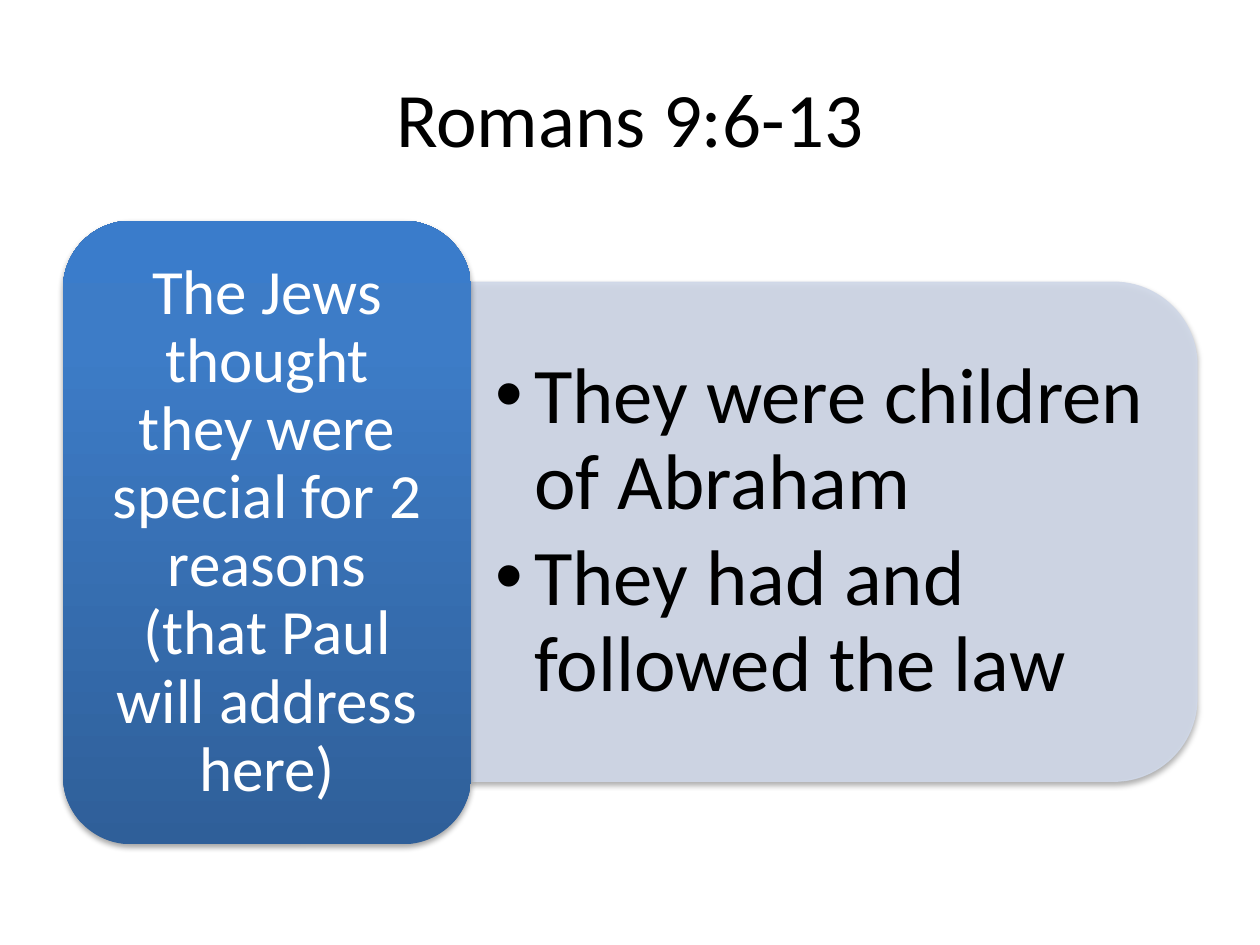
from copy import deepcopy

from lxml import etree
from pptx import Presentation
from pptx.dml.color import RGBColor
from pptx.enum.shapes import MSO_SHAPE
from pptx.enum.text import MSO_ANCHOR, PP_ALIGN
from pptx.oxml.ns import qn
from pptx.util import Cm, Pt

BLACK = RGBColor(0x00, 0x00, 0x00)
WHITE = RGBColor(0xFF, 0xFF, 0xFF)
PALE_BLUE = RGBColor(0xD0, 0xD8, 0xE8)
DARK_BLUE = RGBColor(0x2F, 0x5F, 0x99)
MID_BLUE = RGBColor(0x3D, 0x7C, 0xC7)
BRIGHT_BLUE = RGBColor(0x3A, 0x7C, 0xCB)
BLUE_STOPS = [(0, DARK_BLUE), (0.8, MID_BLUE), (1, BRIGHT_BLUE)]
CENTER, LEFT = PP_ALIGN.CENTER, PP_ALIGN.LEFT
MIDDLE = MSO_ANCHOR.MIDDLE
ROUNDED = MSO_SHAPE.ROUNDED_RECTANGLE
ROUNDED_TOP = MSO_SHAPE.ROUND_2_SAME_RECTANGLE

TITLE = "Romans 9:6-13"
CLAIM = "The Jews thought they were special for 2 reasons (that Paul will address here)"
REASONS = ["They were children of Abraham", "They had and followed the law"]


class SlideBuilder:
    """Hold the text style and the current slide, and add its elements."""

    font_name = "Calibri"

    def __init__(self, presentation):
        self.slide = presentation.slides.add_slide(presentation.slide_layouts[5])

    def format_text(self, frame, texts, size, color, margins, paragraph_format):
        frame_format = {
            "word_wrap": True,
            "vertical_anchor": MIDDLE,
            "margin_left": Cm(margins[0]),
            "margin_right": Cm(margins[0]),
            "margin_top": Cm(margins[1]),
            "margin_bottom": Cm(margins[1]),
        }
        for name, value in frame_format.items():
            setattr(frame, name, value)
        frame.text = "\n".join(texts)
        for paragraph in frame.paragraphs:
            for name, value in paragraph_format.items():
                setattr(paragraph, name, value)
            font_format = {"name": self.font_name, "size": Pt(size)}
            for run in paragraph.runs:
                for name, value in font_format.items():
                    setattr(run.font, name, value)
                run.font.color.rgb = color

    def title(self, text, box):
        title = self.slide.shapes.title
        for name, value in zip(("left", "top", "width", "height"), box):
            setattr(title, name, Cm(value))
        self.format_text(
            title.text_frame, [text], 44, BLACK, (0.25, 0.13), {"alignment": CENTER}
        )

    def panel(self, kind, box):
        shape = self.slide.shapes.add_shape(kind, *map(Cm, box))
        shape.shadow.inherit = False
        effects = shape._element.spPr.find(qn("a:effectLst"))
        shadow = etree.SubElement(
            effects, qn("a:outerShdw"),
            blurRad=str(Pt(3.1)), dist=str(Pt(1.8)), dir="5400000", rotWithShape="0",
        )
        color = etree.SubElement(shadow, qn("a:srgbClr"), val="000000")
        etree.SubElement(color, qn("a:alpha"), val="35000")
        return shape

    def reasons_panel(self, box):
        left, top, width, height = box
        shift = (width - height) / 2
        shape = self.panel(ROUNDED_TOP, (left + shift, top - shift, height, width))
        shape.rotation = 90
        shape.line.width = Pt(0.75)
        for fill in (shape.fill, shape.line.fill):
            fill.solid()
            fill.fore_color.rgb = PALE_BLUE
        properties = shape._element.spPr
        for path in ("a:solidFill/a:srgbClr", "a:ln/a:solidFill/a:srgbClr"):
            color = properties.xpath(path)[0]
            etree.SubElement(color, qn("a:alpha"), val="90000")

    def claim_panel(self, text, box):
        shape = self.panel(ROUNDED, box)
        shape.line.fill.background()
        shape.fill.gradient()
        shape.fill.gradient_angle = 90
        stop_list = shape._element.spPr.xpath("a:gradFill/a:gsLst")[0]
        stop_list.append(deepcopy(stop_list[-1]))
        for stop, (position, color) in zip(shape.fill.gradient_stops, BLUE_STOPS):
            stop.position = position
            stop.color.rgb = color
        self.format_text(
            shape.text_frame, [text], 36, WHITE, (0.38, 0.18),
            {"alignment": CENTER, "line_spacing": 0.9},
        )

    def bullet_list(self, texts, box):
        frame = self.slide.shapes.add_textbox(*map(Cm, box)).text_frame
        self.format_text(
            frame, texts, 45, BLACK, (0.48, 0.23),
            {"alignment": LEFT, "level": 1, "line_spacing": 0.9, "space_after": Pt(6.75)},
        )
        for paragraph in frame.paragraphs:
            properties = paragraph._p.get_or_add_pPr()
            properties.set("marL", str(Cm(0.79)))
            properties.set("indent", str(Cm(-0.79)))
            etree.SubElement(properties, qn("a:buFont"), typeface="Arial")
            etree.SubElement(properties, qn("a:buChar"), char="•")


def main():
    presentation = Presentation()
    presentation.slide_width = Cm(25.4)
    presentation.slide_height = Cm(19.05)
    builder = SlideBuilder(presentation)
    builder.title(TITLE, (1.27, 0.76, 22.86, 3.18))
    builder.reasons_panel((9.5, 5.69, 14.63, 10.06))
    builder.bullet_list(REASONS, (9.5, 6.19, 14.15, 9.07))
    builder.claim_panel(CLAIM, (1.27, 4.45, 8.23, 12.57))
    presentation.save("out.pptx")


if __name__ == "__main__":
    main()
